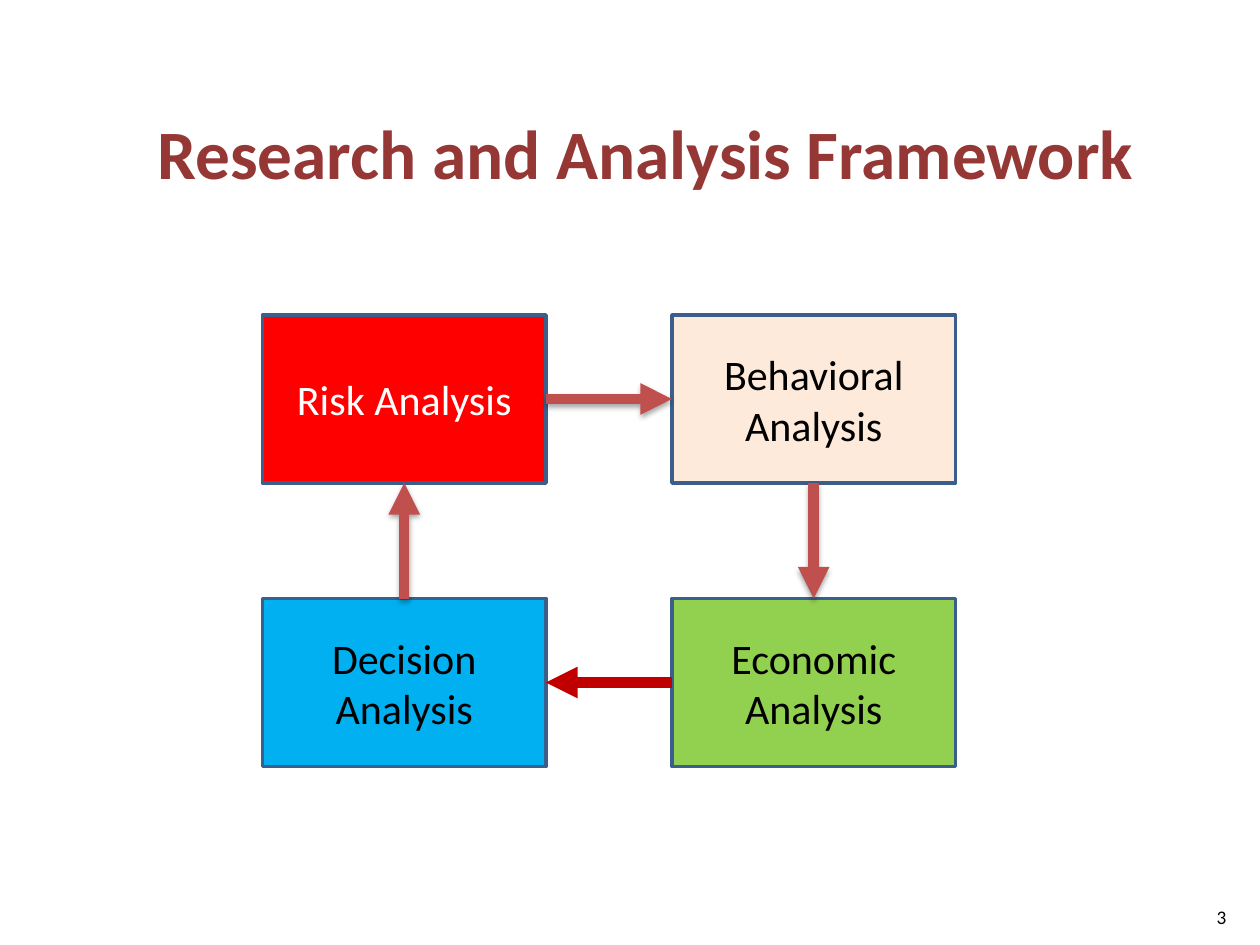
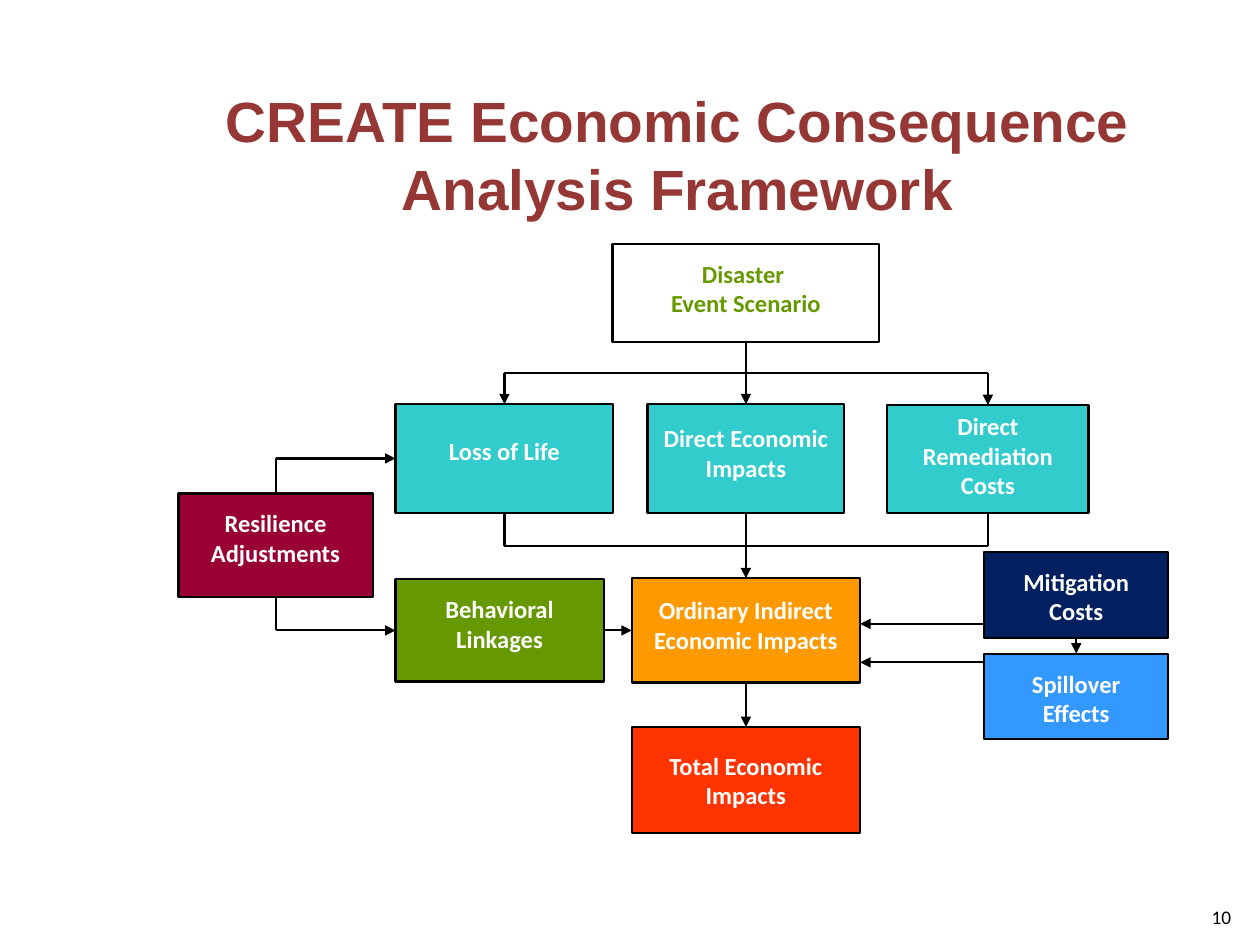
"""Build two framework slides: the research cycle and the economic consequence flow."""
from lxml.etree import SubElement
from pptx import Presentation
from pptx.dml.color import RGBColor
from pptx.enum.shapes import MSO_CONNECTOR, MSO_SHAPE
from pptx.enum.text import MSO_ANCHOR, PP_ALIGN
from pptx.oxml.ns import qn
from pptx.util import Pt

BLACK = RGBColor(0, 0, 0)
WHITE = RGBColor(255, 255, 255)
MAROON = RGBColor(0x95, 0x37, 0x35)
STEEL = RGBColor(0x3A, 0x5F, 0x8C)
RED = RGBColor(0xFF, 0, 0)
CREAM = RGBColor(0xFD, 0xEA, 0xDA)
LIME = RGBColor(0x92, 0xD0, 0x50)
SKY = RGBColor(0, 0xB0, 0xF0)
BRICK = RGBColor(0xC0, 0x50, 0x4D)
DARK_RED = RGBColor(0xC0, 0, 0)
TEAL = RGBColor(0x33, 0xCC, 0xCC)
WINE = RGBColor(0x99, 0, 0x33)
GREEN = RGBColor(0x66, 0x99, 0)
ORANGE = RGBColor(0xFF, 0x99, 0)
VERMILION = RGBColor(0xFF, 0x33, 0)
BLUE = RGBColor(0x33, 0x99, 0xFF)
NAVY = RGBColor(0, 0x20, 0x60)

TOP, LEFT, BOTTOM, RIGHT = range(4)
NUMBER_AREA = (680.5, 514, 35, 21)

CYCLE_TITLE = ("Research and Analysis Framework", (54, 48, 630, 78), "Calibri", 39.6)
CYCLE_ORIGIN, CYCLE_STEP, CYCLE_SIZE = (150, 180), (234, 162), (162, 96)
CYCLE_BOXES = [
    ("Risk Analysis", 0, 0, RED, WHITE),
    ("Behavioral Analysis", 1, 0, CREAM, BLACK),
    ("Economic Analysis", 1, 1, LIME, BLACK),
    ("Decision Analysis", 0, 1, SKY, BLACK),
]
CYCLE_ARROWS = [
    (("Risk Analysis", RIGHT), ("Behavioral Analysis", LEFT), BRICK, True),
    (("Behavioral Analysis", BOTTOM), ("Economic Analysis", TOP), BRICK, True),
    (("Economic Analysis", LEFT), ("Decision Analysis", RIGHT), DARK_RED, False),
    (("Decision Analysis", TOP), ("Risk Analysis", BOTTOM), BRICK, True),
]

FLOW_TITLE = ("CREATE Economic Consequence Analysis Framework", (54, 54, 666, 67.5), "Arial", 32.4)
FLOW_BOXES = {
    "disaster": ("Disaster \vEvent Scenario", (350, 139.5, 152.5, 56), WHITE, GREEN, 8.5),
    "life": ("Loss of Life", (226, 231, 124.5, 62), TEAL, WHITE, 18.2),
    "direct": ("Direct Economic Impacts", (370, 231, 112.5, 62), TEAL, WHITE, 11),
    "remediation": ("Direct\vRemediation\vCosts", (507, 231.5, 115, 61.5), TEAL, WHITE, 3.6),
    "resilience": ("Resilience\nAdjustments", (102, 282, 111, 59), WINE, WHITE, 8.5),
    "behavior": ("Behavioral\nLinkages", (226, 331, 119, 58.5), GREEN, WHITE, 8.5),
    "total": ("Total Economic\nImpacts", (361, 415.5, 130.5, 60.5), VERMILION, WHITE, 13.4),
    "indirect": ("Ordinary Indirect\nEconomic Impacts", (361, 330.5, 130.5, 59.5), ORANGE, WHITE, 9.7),
    "spillover": ("Spillover\nEffects", (562.5, 373.5, 105, 49), BLUE, WHITE, 8.5),
    "mitigation": ("Mitigation\nCosts", (562.5, 315.5, 105, 49), NAVY, WHITE, 8.5),
}
UPPER_BUS, LOWER_BUS = 213, 312
LIFE_X, REMEDIATION_X, RESILIENCE_X = 288.25, 564.5, 157.5
LIFE_Y, BEHAVIOR_Y = 262, 360.25
COST_LEFT, INDIRECT_RIGHT = 562.5, 491.5
FLOW_LINKS = [
    (("disaster", BOTTOM), ("direct", TOP), 1.5, True),
    ((LIFE_X, UPPER_BUS), (REMEDIATION_X, UPPER_BUS), 1.25, False),
    ((LIFE_X, UPPER_BUS), ("life", TOP), 1.5, True),
    ((REMEDIATION_X, UPPER_BUS), ("remediation", TOP), 1.5, True),
    (("direct", BOTTOM), ("indirect", TOP), 1.25, True),
    ((LIFE_X, LOWER_BUS), (REMEDIATION_X, LOWER_BUS), 1.25, False),
    ((LIFE_X, LOWER_BUS), ("life", BOTTOM), 1.5, False),
    ((REMEDIATION_X, LOWER_BUS), ("remediation", BOTTOM), 1.5, False),
    ((RESILIENCE_X, LIFE_Y), ("resilience", TOP), 1.25, False),
    ((RESILIENCE_X, LIFE_Y), ("life", LEFT), 1.25, True),
    (("resilience", BOTTOM), (RESILIENCE_X, BEHAVIOR_Y), 1.25, False),
    ((RESILIENCE_X, BEHAVIOR_Y), ("behavior", LEFT), 1.25, True),
    (("behavior", RIGHT), ("indirect", LEFT), 1.25, True),
    (("indirect", BOTTOM), ("total", TOP), 1.5, True),
    (("mitigation", BOTTOM), ("spillover", TOP), 1.25, True),
    ((COST_LEFT, 356.5), (INDIRECT_RIGHT, 356.5), 1.25, True),
    ((COST_LEFT, 378.5), (INDIRECT_RIGHT, 378.5), 1.25, True),
]


def write(shape, text, font, size, color, bold=False, anchor=MSO_ANCHOR.TOP):
    frame = shape.text_frame
    frame.word_wrap = True
    frame.vertical_anchor = anchor
    frame.text = text
    for paragraph in frame.paragraphs:
        paragraph.alignment = PP_ALIGN.CENTER
        for span in paragraph.runs:
            span.font.name = font
            span.font.size = Pt(size)
            span.font.bold = bold
            span.font.color.rgb = color


def add_text(page, text, area, *style, **options):
    write(page.shapes.add_textbox(*map(Pt, area)), text, *style, **options)


def add_page(deck, title, number):
    page = deck.slides.add_slide(deck.slide_layouts[6])
    text, area, font, size = title
    add_text(page, number, NUMBER_AREA, "Calibri", 11, BLACK)
    add_text(page, text, area, font, size, MAROON, bold=True, anchor=MSO_ANCHOR.MIDDLE)
    return page


def add_box(page, area, fill, outline, weight):
    box = page.shapes.add_shape(MSO_SHAPE.RECTANGLE, *map(Pt, area))
    box.shadow.inherit = False
    box.fill.solid()
    box.fill.fore_color.rgb = fill
    box.line.color.rgb = outline
    box.line.width = Pt(weight)
    return box


def locate(boxes, end):
    name, site = end
    if name not in boxes:
        return Pt(name), Pt(site)
    box = boxes[name]
    across = {LEFT: 0, RIGHT: box.width}.get(site, box.width // 2)
    down = {TOP: 0, BOTTOM: box.height}.get(site, box.height // 2)
    return box.left + across, box.top + down


def add_link(page, boxes, start, finish, color, weight, arrow=True, shadow=False):
    link = page.shapes.add_connector(
        MSO_CONNECTOR.STRAIGHT, *locate(boxes, start), *locate(boxes, finish))
    for (name, site), join in ((start, link.begin_connect), (finish, link.end_connect)):
        if name in boxes:
            join(boxes[name], site)
    link.line.color.rgb = color
    link.line.width = Pt(weight)
    properties = link.element.spPr
    if arrow:
        SubElement(properties.find(qn("a:ln")), qn("a:tailEnd"), type="triangle")
    effects = SubElement(properties, qn("a:effectLst"))
    if shadow:
        outer = SubElement(effects, qn("a:outerShdw"), blurRad=str(Pt(3.1)),
                           dist=str(Pt(1.8)), dir="5400000", rotWithShape="0")
        tone = SubElement(outer, qn("a:srgbClr"), val=str(BLACK))
        SubElement(tone, qn("a:alpha"), val="35000")


def build_cycle(deck):
    page = add_page(deck, CYCLE_TITLE, "3")
    boxes = {}
    for text, column, row, fill, color in CYCLE_BOXES:
        left = CYCLE_ORIGIN[0] + column * CYCLE_STEP[0]
        top = CYCLE_ORIGIN[1] + row * CYCLE_STEP[1]
        boxes[text] = add_box(page, (left, top, *CYCLE_SIZE), fill, STEEL, 2)
        write(boxes[text], text, "Calibri", 24, color, anchor=MSO_ANCHOR.MIDDLE)
    for start, finish, color, shadow in CYCLE_ARROWS:
        add_link(page, boxes, start, finish, color, 6, shadow=shadow)


def build_flow(deck):
    page = add_page(deck, FLOW_TITLE, "10")
    boxes = {}
    for name, (text, area, fill, color, inset) in FLOW_BOXES.items():
        boxes[name] = add_box(page, area, fill, BLACK, 1.25)
        boxes[name].text_frame.margin_top = Pt(inset)
        write(boxes[name], text, "Calibri", 14, color, bold=True)
    for start, finish, weight, arrow in FLOW_LINKS:
        add_link(page, boxes, start, finish, BLACK, weight, arrow)


def main():
    deck = Presentation()
    deck.slide_width, deck.slide_height = Pt(720), Pt(540)
    build_cycle(deck)
    build_flow(deck)
    deck.save("out.pptx")


if __name__ == "__main__":
    main()
